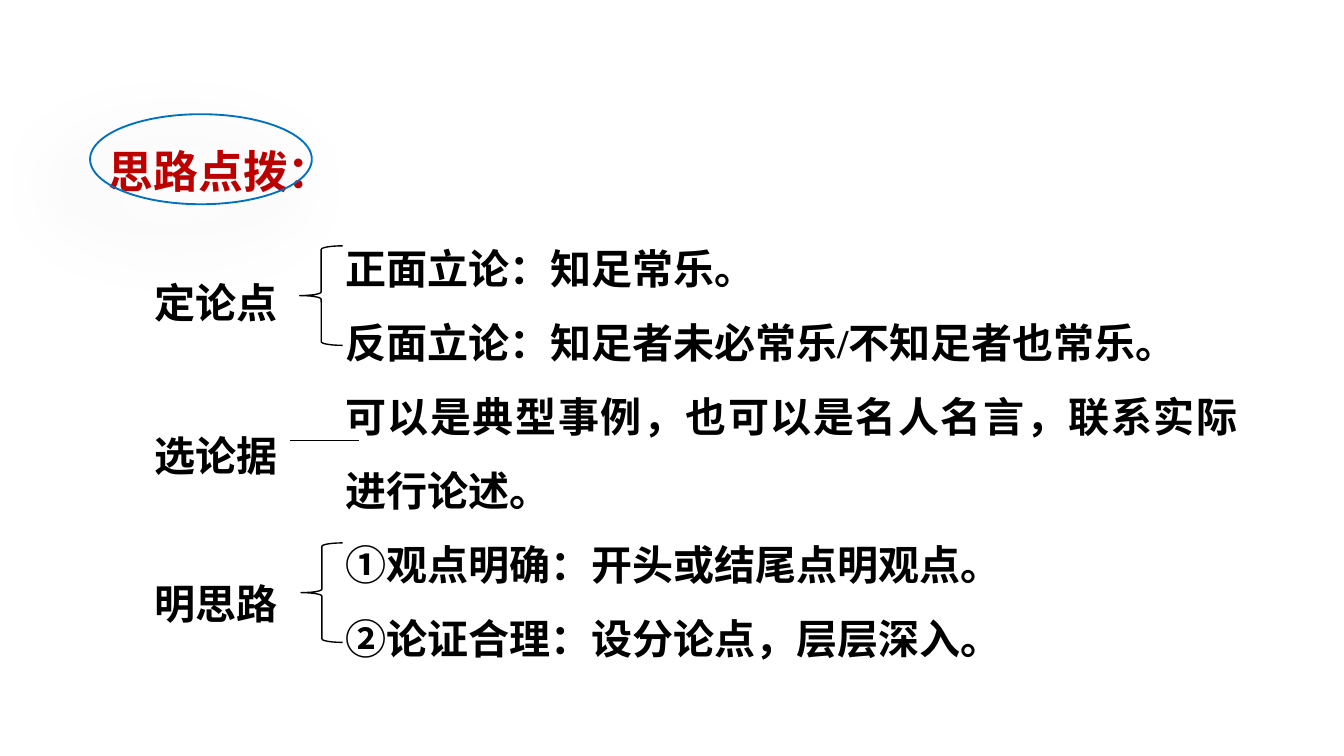
import pptx
import pptx.dml.color
import pptx.enum.shapes
import pptx.enum.text
import pptx.oxml
import pptx.oxml.ns
import pptx.util
from pptx.util import Inches

RED = pptx.dml.color.RGBColor(0xC0, 0x00, 0x00)
BLUE = pptx.dml.color.RGBColor(0x00, 0x70, 0xC0)
BLACK = pptx.dml.color.RGBColor(0x00, 0x00, 0x00)
SANS = "Noto Sans CJK SC"
SERIF = "Times New Roman"
LINE_PITCH = 1.8  # line height as a multiple of the text size

# Content
TITLE = "思路点拨："
STEPS = [("定论点", 1.83, 0.57), ("选论据", 2.97, 0.57), ("明思路", 4.07, 0.66)]
DETAILS = [
    "正面立论：知足常乐。",
    "反面立论：知足者未必常乐/不知足者也常乐。",
    "可以是典型事例，也可以是名人名言，联系实际进行论述。",
    "①观点明确：开头或结尾点明观点。",
    "②论证合理：设分论点，层层深入。",
]
BRACES = [(2.23, 1.83, 0.32), (2.24, 4.04, 0.31)]

# Widescreen page, 16:9
deck = pptx.Presentation()
deck.slide_width = Inches(10)
deck.slide_height = deck.slide_width * 9 // 16
page = deck.slides.add_slide(deck.slide_layouts[6])


def add_text(lines, *, left, top, width, height, size=22, font=SANS,
             color=BLACK, hanging=0):
    box = page.shapes.add_textbox(Inches(left), Inches(top), Inches(width), Inches(height))
    frame = box.text_frame
    frame.word_wrap = True
    frame.auto_size = pptx.enum.text.MSO_AUTO_SIZE.SHAPE_TO_FIT_TEXT
    for index, line in enumerate(lines):
        para = frame.paragraphs[0] if index == 0 else frame.add_paragraph()
        para.alignment = pptx.enum.text.PP_ALIGN.JUSTIFY
        para.line_spacing = pptx.util.Pt(size * LINE_PITCH)
        if hanging:
            properties = para._p.get_or_add_pPr()
            properties.set("marL", str(Inches(hanging)))
            properties.set("indent", str(-Inches(hanging)))
        span = para.add_run()
        span.text = line
        span.font.size = pptx.util.Pt(size)
        span.font.bold = True
        span.font.name = font
        span.font.color.rgb = color
        east_asian = pptx.oxml.parse_xml(
            f'<a:ea {pptx.oxml.ns.nsdecls("a")} typeface="{SANS}"/>')
        span.font._element.find(pptx.oxml.ns.qn("a:latin")).addnext(east_asian)


def add_outline(kind, *, left, top, width, height, color, weight):
    shape = page.shapes.add_shape(
        kind, Inches(left), Inches(top), Inches(width), Inches(height))
    shape.shadow.inherit = False
    shape.fill.background()
    shape.line.color.rgb = color
    shape.line.width = pptx.util.Pt(weight)
    return shape


# Title with its ringed shadow
add_text([TITLE], left=0.71, top=0.82, width=3.02, height=0.71,
         size=24, color=RED, hanging=0.69)
ring = add_outline(pptx.enum.shapes.MSO_SHAPE.OVAL, left=0.67, top=0.85,
                   width=1.65, height=0.67, color=BLUE, weight=1)
effects = ring._element.spPr.find(pptx.oxml.ns.qn("a:effectLst"))
effects.append(pptx.oxml.parse_xml(
    f'<a:outerShdw {pptx.oxml.ns.nsdecls("a")} blurRad="{pptx.util.Pt(35)}" '
    f'dist="{pptx.util.Pt(20)}" dir="{135 * 60000}" algn="ctr" rotWithShape="0">'
    '<a:srgbClr val="000000"><a:alpha val="50000"/></a:srgbClr></a:outerShdw>'))

# Steps and their details
for label, top, height in STEPS:
    add_text([label], left=1.05, top=top, width=1.65, height=height)
add_text(DETAILS, left=2.47, top=1.58, width=6.84, height=3.43, font=SERIF)

# Braces and link
for left, top, width in BRACES:
    add_outline(pptx.enum.shapes.MSO_SHAPE.LEFT_BRACE, left=left, top=top,
                width=width, height=0.74, color=BLACK, weight=0.75)
link = page.shapes.add_connector(
    pptx.enum.shapes.MSO_CONNECTOR.STRAIGHT,
    Inches(2.16), Inches(3.28), Inches(2.67), Inches(3.28))
link.line.color.rgb = BLACK
link.line.width = pptx.util.Pt(0.75)
link._element.spPr.append(pptx.oxml.parse_xml(
    f'<a:effectLst {pptx.oxml.ns.nsdecls("a")}/>'))

deck.save("out.pptx")
